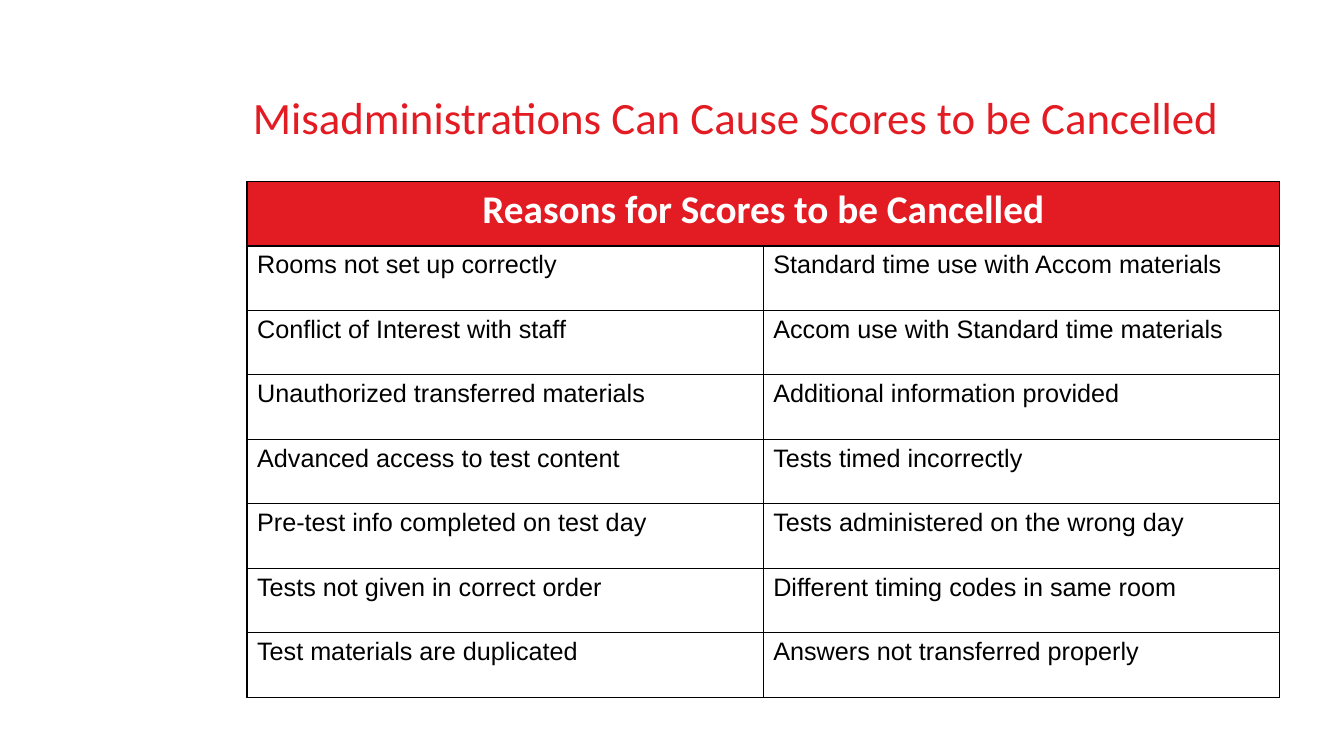
import pptx
import pptx.dml.color
import pptx.enum.text
import pptx.oxml.ns
import pptx.util
from lxml import etree

Inches = pptx.util.Inches
Pt = pptx.util.Pt
Align = pptx.enum.text.PP_ALIGN
Anchor = pptx.enum.text.MSO_ANCHOR

RED = pptx.dml.color.RGBColor(0xE3, 0x1B, 0x23)
WHITE = pptx.dml.color.RGBColor(0xFF, 0xFF, 0xFF)
BLACK = pptx.dml.color.RGBColor(0x00, 0x00, 0x00)

TITLE = "Misadministrations Can Cause Scores to be Cancelled"
HEADING = "Reasons for Scores to be Cancelled"
REASONS = [
    ("Rooms not set up correctly", "Standard time use with Accom materials"),
    ("Conflict of Interest with staff", "Accom use with Standard time materials"),
    ("Unauthorized transferred materials", "Additional information provided"),
    ("Advanced access to test content", "Tests timed incorrectly"),
    ("Pre-test info completed on test day", "Tests administered on the wrong day"),
    ("Tests not given in correct order", "Different timing codes in same room"),
    ("Test materials are duplicated", "Answers not transferred properly"),
]


class SlideBuilder:
    heading_font = "Calibri"
    body_font = "Arial"

    def __init__(self, slide):
        self.slide = slide

    def set_text(self, text_frame, text, font_name, size, color, bold=False, align=Align.LEFT):
        paragraph = text_frame.paragraphs[0]
        paragraph.text = text
        paragraph.alignment = align
        font = paragraph.font
        font.name, font.size, font.bold = font_name, Pt(size), bold
        font.color.rgb = color
        return paragraph

    def title(self, text, left, top, width, height):
        box = self.slide.shapes.add_textbox(
            Inches(left), Inches(top), Inches(width), Inches(height))
        frame = box.text_frame
        frame.word_wrap = True
        frame.vertical_anchor = Anchor.BOTTOM
        paragraph = self.set_text(frame, text, self.heading_font, 32, RED, align=Align.CENTER)
        paragraph.line_spacing = 0.9

    def border(self, cell, color=BLACK, width=1):
        """Draw a solid line on all four sides; call before setting the fill."""
        properties = cell._tc.get_or_add_tcPr()
        qn = pptx.oxml.ns.qn
        for side in ("a:lnL", "a:lnR", "a:lnT", "a:lnB"):
            line = etree.SubElement(properties, qn(side), w=str(Pt(width)))
            fill = etree.SubElement(line, qn("a:solidFill"))
            etree.SubElement(fill, qn("a:srgbClr"), val=str(color))

    def table(self, heading, rows, left, top, column_width, row_height):
        row_count, column_count = len(rows) + 1, len(rows[0])
        table = self.slide.shapes.add_table(
            row_count, column_count, Inches(left), Inches(top),
            Inches(column_width * column_count), Inches(row_height * row_count)).table
        table.horz_banding = False
        for column in table.columns:
            column.width = Inches(column_width)
        for row in table.rows:
            row.height = Inches(row_height)
        for cell in table.iter_cells():
            self.border(cell)
            cell.fill.background()

        header = table.cell(0, 0)
        header.merge(table.cell(0, column_count - 1))
        header.fill.solid()
        header.fill.fore_color.rgb = RED
        self.set_text(header.text_frame, heading, self.heading_font, 28, WHITE,
                      bold=True, align=Align.CENTER)
        for row_index, row in enumerate(rows, start=1):
            for column_index, text in enumerate(row):
                self.set_text(table.cell(row_index, column_index).text_frame,
                              text, self.body_font, 18, BLACK)


def main():
    presentation = pptx.Presentation()
    presentation.slide_width = Inches(13.33)
    presentation.slide_height = Inches(7.5)
    builder = SlideBuilder(presentation.slides.add_slide(presentation.slide_layouts[6]))
    builder.table(HEADING, REASONS, left=2.45, top=1.8, column_width=5.12, row_height=0.64)
    builder.title(TITLE, left=1.27, top=0.65, width=12.06, height=0.83)
    presentation.save("out.pptx")


if __name__ == "__main__":
    main()
